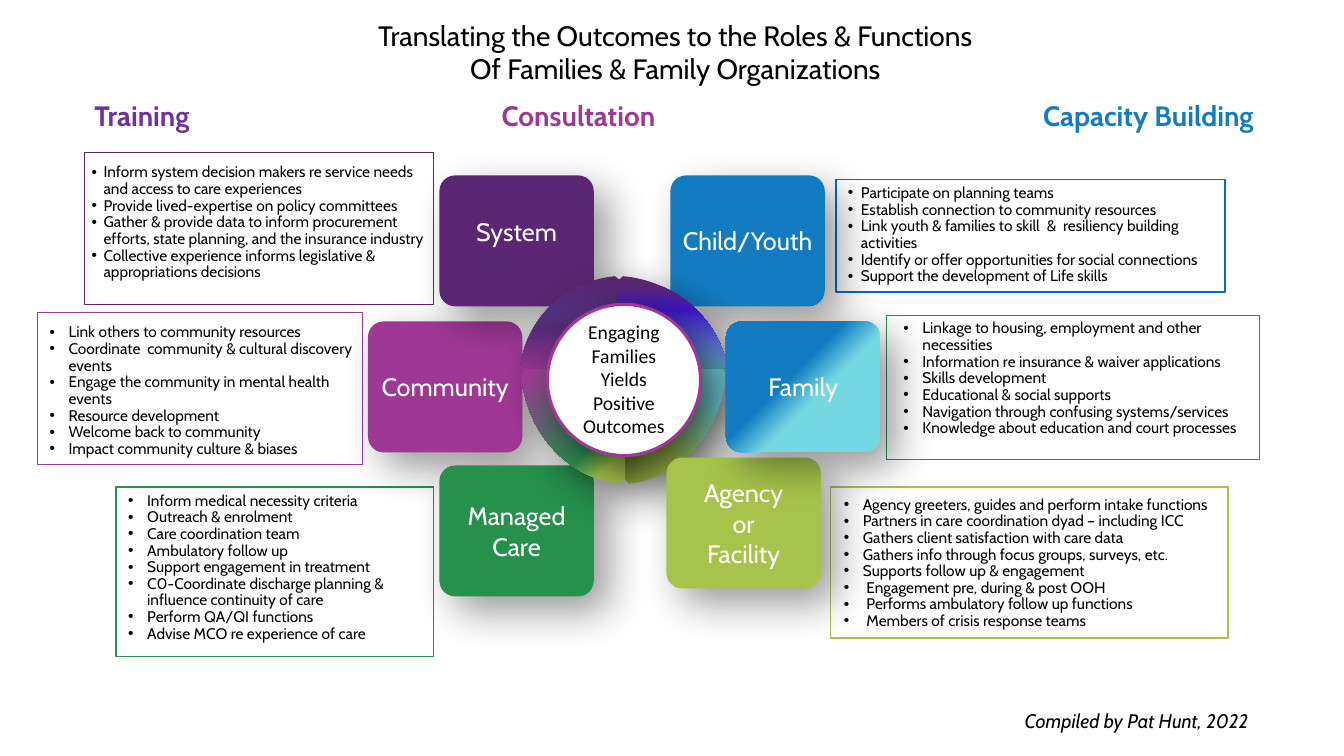
import pptx
import pptx.dml.color
import pptx.enum.shapes
import pptx.enum.text
import pptx.oxml.ns
import pptx.util
from lxml import etree

Cm, Pt = pptx.util.Cm, pptx.util.Pt
RGB = pptx.dml.color.RGBColor
SHAPE = pptx.enum.shapes.MSO_SHAPE
ALIGN = pptx.enum.text.PP_ALIGN
ANCHOR = pptx.enum.text.MSO_ANCHOR
qn = pptx.oxml.ns.qn

BLACK = RGB(0x00, 0x00, 0x00)
WHITE = RGB(0xFF, 0xFF, 0xFF)
PLUM = RGB(0x5B, 0x26, 0x72)
INDIGO = RGB(0x52, 0x30, 0x7C)
GRAPE = RGB(0x57, 0x2B, 0x77)
VIOLET = RGB(0x70, 0x30, 0xA0)
PINK = RGB(0x9F, 0x38, 0x95)
BLUE = RGB(0x13, 0x7C, 0xC1)
AZURE = RGB(0x00, 0x70, 0xC0)
ROYAL = RGB(0x3E, 0x17, 0xCC)
AQUA = RGB(0x74, 0xD8, 0xE2)
GREEN = RGB(0x26, 0x90, 0x4D)
LIME = RGB(0xA6, 0xC4, 0x4B)


def write(shape, lines, size=11, color=BLACK, font="Cabin", bold=False, italic=False,
          align=ALIGN.LEFT, anchor=ANCHOR.TOP, inset=(0.25, 0.13, 0.25, 0.13),
          indent=0, hang=0):
    """Fill a shape with paragraphs; a line is a string or a list of (text, colour).

    With hang, each paragraph gets a bullet. Insets and indents are in cm.
    """
    frame = shape.text_frame
    frame.word_wrap = True
    frame.vertical_anchor = anchor
    frame.margin_left, frame.margin_top, frame.margin_right, frame.margin_bottom = map(Cm, inset)
    for i, line in enumerate(lines):
        para = frame.add_paragraph() if i else frame.paragraphs[0]
        para.alignment = align
        if hang:
            para.line_spacing = 0.9
            props = para._p.get_or_add_pPr()
            props.set("marL", str(Cm(indent)))
            props.set("indent", str(-Cm(hang)))
            etree.SubElement(props, qn("a:buFont"), typeface="Arial")
            etree.SubElement(props, qn("a:buChar"), char="•")
        for text, tone in [(line, color)] if isinstance(line, str) else line:
            run = para.add_run()
            run.text = text
            run.font.name, run.font.size = font, Pt(size)
            run.font.bold, run.font.italic = bold, italic
            run.font.color.rgb = tone
    return frame


def paint(shape, stops, angle=0, alpha=40):
    """Fill with (percent, colour) stops, drop the outline and cast a soft shadow."""
    props = shape._element.spPr
    if len(stops) == 1:
        shape.fill.solid()
        shape.fill.fore_color.rgb = stops[0][1]
    else:
        shape.fill.gradient()
        shape.fill.gradient_angle = 360 - angle
        ramp = props.find(".//" + qn("a:gsLst"))
        for old in list(ramp):
            ramp.remove(old)
        for spot, color in stops:
            stop = etree.SubElement(ramp, qn("a:gs"), pos=str(spot * 1000))
            etree.SubElement(stop, qn("a:srgbClr"), val=str(color))
    shape.line.fill.background()
    shape.shadow.inherit = False
    cast = etree.SubElement(props.find(qn("a:effectLst")), qn("a:outerShdw"),
                            blurRad=str(Pt(30)), dist=str(Pt(15)), dir="2700000",
                            algn="tl", rotWithShape="0")
    tint = etree.SubElement(cast, qn("a:srgbClr"), val=str(BLACK))
    etree.SubElement(tint, qn("a:alpha"), val=str(alpha * 1000))


deck = pptx.Presentation()
deck.slide_width, deck.slide_height = Cm(33.86), Cm(19.05)
slide = deck.slides.add_slide(deck.slide_layouts[6])
shapes = slide.shapes

# Title, credit and column heads
title = shapes.add_textbox(Cm(2.92), Cm(0.33), Cm(28.19), Cm(1.96))
write(title, ["Translating the Outcomes to the Roles & Functions",
              "Of Families & Family Organizations"], size=20, align=ALIGN.CENTER)
credit = shapes.add_textbox(Cm(24.33), Cm(17.73), Cm(8.61), Cm(0.86))
write(credit, ["Compiled by Pat Hunt, 2022"], size=14, italic=True, align=ALIGN.CENTER)
heads = shapes.add_textbox(Cm(2.13), Cm(2.34), Cm(30.4), Cm(1.12))
row = write(heads, [[("Training\t", VIOLET), ("Consultation\t", PINK),
                     ("Capacity Building", BLUE)]], size=20, bold=True)
tabs = etree.SubElement(row.paragraphs[0]._p.get_or_add_pPr(), qn("a:tabLst"))
for stop in (10.26, 23.9):
    etree.SubElement(tabs, qn("a:tab"), pos=str(Cm(stop)), algn="l")

# Notes: box, outline, top inset, indent, hang, lines
notes = {
    "Family": ((22.33, 7.95, 9.4, 3.63), GREEN, 0.13, 0.91, 0.48, [
        "Linkage to housing, employment and other necessities",
        "Information re insurance & waiver applications",
        "Skills development",
        "Educational & social supports",
        "Navigation through confusing systems/services",
        "Knowledge about education and court processes"]),
    "Community": ((0.94, 7.87, 8.2, 3.84), PINK, 0.31, 0.79, 0.48, [
        "Link others to community resources",
        "Coordinate  community & cultural discovery events",
        "Engage the community in mental health events",
        "Resource development",
        "Welcome back to community",
        "Impact community culture & biases"]),
    "Child": ((21.06, 4.52, 9.8, 2.84), AZURE, 0.15, 0.63, 0.33, [
        "Participate on planning teams",
        "Establish connection to community resources",
        "Link youth & families to skill  &  resiliency building activities",
        "Identify or offer opportunities for social connections",
        "Support the development of Life skills"]),
    "System": ((2.13, 3.84, 8.79, 3.84), PLUM, 0.31, 0.48, 0.3, [
        "Inform system decision makers re service needs and access to care experiences",
        "Provide lived-expertise on policy committees",
        "Gather & provide data to inform procurement efforts, state planning, "
        "and the insurance industry",
        "Collective experience informs legislative & appropriations decisions"]),
    "Managed": ((2.92, 12.27, 8, 4.27), GREEN, 0.15, 0.79, 0.48, [
        "Inform medical necessity criteria",
        "Outreach & enrolment",
        "Care coordination team",
        "Ambulatory follow up",
        "Support engagement in treatment",
        "C0-Coordinate discharge planning & influence continuity of care",
        "Perform QA/QI functions",
        "Advise MCO re experience of care"]),
    "Agency": ((20.93, 12.27, 10.01, 3.81), LIME, 0.25, 0.81, 0.48, [
        "Agency greeters, guides and perform intake functions",
        "Partners in care coordination dyad – including ICC",
        "Gathers client satisfaction with care data",
        "Gathers info through focus groups, surveys, etc.",
        "Supports follow up & engagement",
        "Engagement pre, during & post OOH",
        "Performs ambulatory follow up functions",
        "Members of crisis response teams"]),
}
for name, (place, edge, top, indent, hang, lines) in notes.items():
    note = shapes.add_shape(SHAPE.RECTANGLE, *map(Cm, place))
    note.fill.background()
    note.line.color.rgb, note.line.width = edge, Pt(1)
    note.shadow.inherit = False
    frame = write(note, lines, inset=(0, top, 0, 0), indent=indent, hang=hang)
    if name == "Agency":
        for para in frame.paragraphs[5:]:
            props = para._p.get_or_add_pPr()
            props.set("marL", str(Cm(indent + 0.09)))
            props.set("indent", str(-Cm(hang + 0.09)))

# Wheel petals: curve (four control points), foot, hub, rim, stops, angle
petals = [
    ([(15.49, 6.96), (14.22, 7.09), (13.23, 8.05), (13.11, 9.3)],
     (13.21, 9.42), (15.62, 9.42), (15.62, 7.06),
     [(0, PLUM), (38, INDIGO), (57, GRAPE), (100, PINK)], 90),
    ([(15.7, 6.96), (17.09, 7.09), (18.21, 8.13), (18.34, 9.42)],
     (18.24, 9.55), (15.54, 9.55), (15.54, 7.09),
     [(9, PLUM), (33, ROYAL), (100, AQUA)], 90),
    ([(15.85, 12.19), (17.15, 12.04), (18.16, 10.9), (18.29, 9.45)],
     (18.19, 9.3), (15.72, 9.3), (15.72, 12.04),
     [(34, LIME), (79, AQUA)], 315),
    ([(15.6, 12.19), (14.3, 12.04), (13.26, 10.9), (13.13, 9.45)],
     (13.23, 9.3), (15.75, 9.3), (15.75, 12.07),
     [(16, LIME), (33, GREEN), (97, PINK)], 225),
]
# Tiles: left, top, lines, stops, bottom inset
tiles = [
    (9.27, 8.1, ["Community"], [(0, PINK)], 0),
    (11.07, 11.73, ["Managed Care"], [(0, GREEN)], 0),
    (16.89, 4.42, ["Child/Youth"], [(0, BLUE)], 0),
    (11.07, 4.42, ["System"], [(0, PLUM)], 0.46),
    (16.79, 11.53, ["Agency", "or", "Facility"], [(0, LIME)], 0),
    (18.29, 8.1, ["Family"], [(42, AQUA), (58, BLUE)], 0),
]
STEPS = 24
for i, (left, top, lines, stops, base) in enumerate(tiles):
    if i == 4:  # the wheel lies over the first four tiles
        for curve, foot, hub, rim, shades, angle in petals:
            dots = []
            for k in range(STEPS + 1):
                t = k / STEPS
                parts = ((1 - t) ** 3, 3 * t * (1 - t) ** 2, 3 * t * t * (1 - t), t ** 3)
                dots.append([sum(w * dot[axis] for w, dot in zip(parts, curve))
                             for axis in (0, 1)])
            dots = [(Cm(x), Cm(y)) for x, y in dots + [foot, hub, rim]]
            pen = shapes.build_freeform(*dots[0])
            pen.add_line_segments(dots[1:])
            paint(pen.convert_to_shape(), shades, angle)
        disc = shapes.add_shape(SHAPE.OVAL, Cm(13.79), Cm(7.67), Cm(3.86), Cm(3.81))
        paint(disc, [(0, WHITE)], alpha=60)
        disc.line.color.rgb, disc.line.width = PINK, Pt(2.25)
        write(disc, ["Engaging Families Yields Positive Outcomes"], size=14, font="Calibri",
              align=ALIGN.CENTER, anchor=ANCHOR.MIDDLE, inset=(0.08, 0, 0.08, 0.05))
    tile = shapes.add_shape(SHAPE.ROUNDED_RECTANGLE, Cm(left), Cm(top), Cm(3.89), Cm(3.3))
    tile.adjustments[0] = 0.12
    paint(tile, stops, 225)
    write(tile, lines, size=18, color=WHITE, align=ALIGN.CENTER, anchor=ANCHOR.MIDDLE,
          inset=(0, 0, 0, base))

deck.save("out.pptx")
